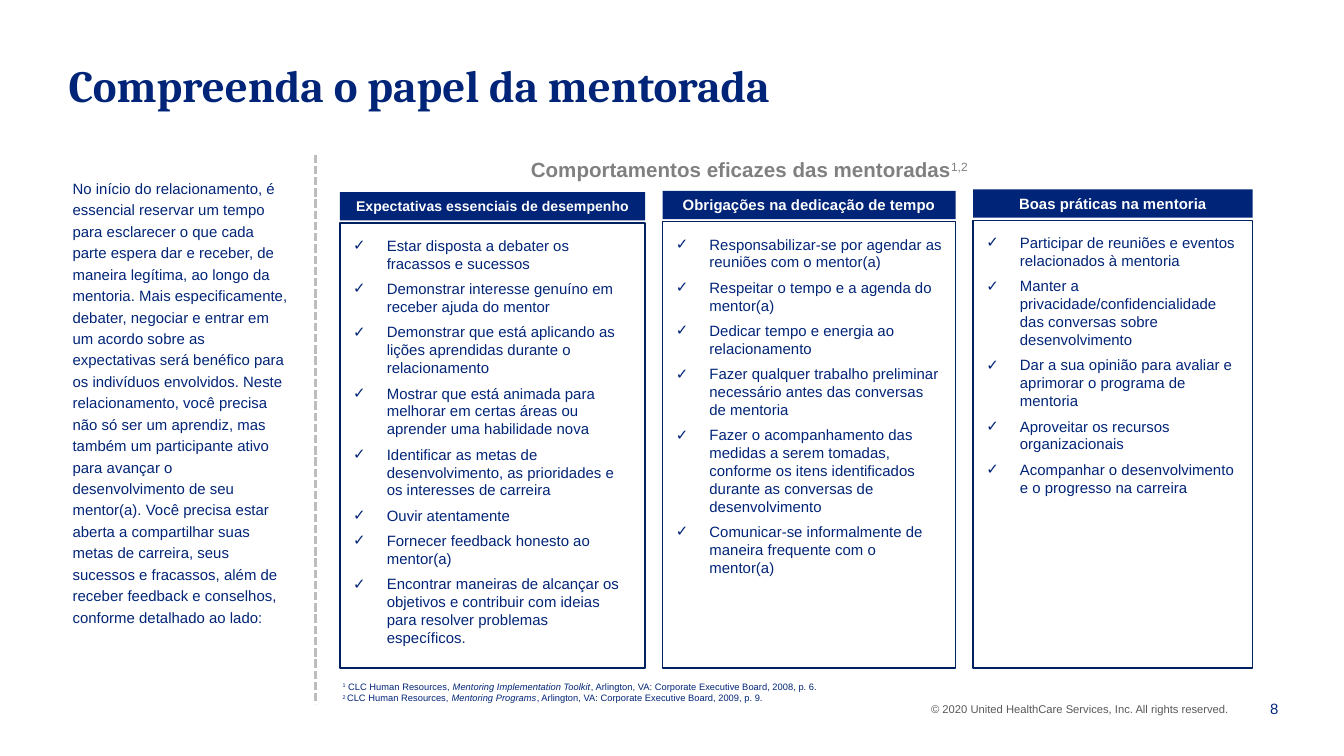
import lxml.etree
import pptx
import pptx.dml.color
import pptx.enum.dml
import pptx.enum.shapes
import pptx.enum.text
import pptx.oxml.ns
import pptx.util

NAVY = "002477"
BORDER = "002060"
GRAY = "808080"
LIGHT_GRAY = "BDBDBD"
FOOTER_GRAY = "595959"
WHITE = "FFFFFF"

ALIGN = pptx.enum.text.PP_ALIGN
ANCHOR = pptx.enum.text.MSO_ANCHOR

COLUMNS_LEFT = 2.53
COLUMNS_TOP = 1.43
COLUMNS_BOTTOM = 4.97
COLUMN_GAP = 0.13
COLUMN_STEP_UP = 0.01
HEADER_HEIGHT = 0.21
HEADER_PITCH = 0.23

INTRODUCTION = (
    "No início do relacionamento, é essencial reservar um tempo para esclarecer o que cada "
    "parte espera dar e receber, de maneira legítima, ao longo da mentoria. Mais "
    "especificamente, debater, negociar e entrar em um acordo sobre as expectativas será "
    "benéfico para os indivíduos envolvidos. Neste relacionamento, você precisa não só ser um "
    "aprendiz, mas também um participante ativo para avançar o desenvolvimento de seu "
    "mentor(a). Você precisa estar aberta a compartilhar suas metas de carreira, seus sucessos "
    "e fracassos, além de receber feedback e conselhos, conforme detalhado ao lado:"
)

COLUMNS = [
    ("Expectativas essenciais de desempenho", 7.5, 2.27, [
        "Estar disposta a debater os fracassos e sucessos",
        "Demonstrar interesse genuíno em receber ajuda do mentor",
        "Demonstrar que está aplicando as lições aprendidas durante o relacionamento",
        "Mostrar que está animada para melhorar em certas áreas ou aprender uma habilidade nova",
        "Identificar as metas de desenvolvimento, as prioridades e os interesses de carreira",
        "Ouvir atentamente",
        "Fornecer feedback honesto ao mentor(a)",
        "Encontrar maneiras de alcançar os objetivos e contribuir com ideias para resolver "
        "problemas específicos.",
    ]),
    ("Obrigações na dedicação de tempo", 8, 2.18, [
        "Responsabilizar-se por agendar as reuniões com o mentor(a)",
        "Respeitar o tempo e a agenda do mentor(a)",
        "Dedicar tempo e energia ao relacionamento",
        "Fazer qualquer trabalho preliminar necessário antes das conversas de mentoria",
        "Fazer o acompanhamento das medidas a serem tomadas, conforme os itens identificados "
        "durante as conversas de desenvolvimento",
        "Comunicar-se informalmente de maneira frequente com o mentor(a)",
    ]),
    ("Boas práticas na mentoria", 8, 2.08, [
        "Participar de reuniões e eventos relacionados à mentoria",
        "Manter a privacidade/confidencialidade das conversas sobre desenvolvimento",
        "Dar a sua opinião para avaliar e aprimorar o programa de mentoria",
        "Aproveitar os recursos organizacionais",
        "Acompanhar o desenvolvimento e o progresso na carreira",
    ]),
]

FOOTNOTES = [
    ("1", " CLC Human Resources, ", "Mentoring Implementation Toolkit",
     ", Arlington, VA: Corporate Executive Board, 2008, p. 6."),
    ("2 ", "CLC Human Resources, ", "Mentoring Programs",
     ", Arlington, VA: Corporate Executive Board, 2009, p. 9."),
]


def color(value):
    return pptx.dml.color.RGBColor.from_string(value)


def inches(*lengths):
    return [pptx.util.Inches(length) for length in lengths]


def add_run(paragraph, text, size, value=NAVY, font="Arial", bold=False, italic=False,
            superscript=False):
    run = paragraph.add_run()
    run.text = text
    run.font.name = font
    run.font.size = pptx.util.Pt(size)
    run.font.bold = bold
    run.font.italic = italic
    run.font.color.rgb = color(value)
    if superscript:
        run._r.get_or_add_rPr().set("baseline", "30000")


def set_bullet(paragraph, character=None, indent=0):
    properties = paragraph._p.get_or_add_pPr()
    properties.set("marL", str(pptx.util.Inches(indent)))
    properties.set("indent", str(-pptx.util.Inches(indent)))
    if character:
        font = lxml.etree.SubElement(properties, pptx.oxml.ns.qn("a:buFont"))
        font.set("typeface", "Arial")
        bullet = lxml.etree.SubElement(properties, pptx.oxml.ns.qn("a:buChar"))
        bullet.set("char", character)
    else:
        lxml.etree.SubElement(properties, pptx.oxml.ns.qn("a:buNone"))


def format_frame(shape, margins=(0.1, 0.05, 0.1, 0.05), anchor=ANCHOR.TOP):
    frame = shape.text_frame
    frame.word_wrap = True
    frame.auto_size = pptx.enum.text.MSO_AUTO_SIZE.NONE
    frame.vertical_anchor = anchor
    (frame.margin_left, frame.margin_top,
     frame.margin_right, frame.margin_bottom) = inches(*margins)
    return frame


def add_text_box(slide, box, **frame_options):
    return format_frame(slide.shapes.add_textbox(*inches(*box)), **frame_options)


def fill_placeholder(placeholder, box):
    placeholder.left, placeholder.top, placeholder.width, placeholder.height = inches(*box)
    paragraph = format_frame(placeholder).paragraphs[0]
    paragraph.alignment = ALIGN.LEFT
    paragraph.space_before = pptx.util.Pt(0)
    set_bullet(paragraph)
    return paragraph


def add_rectangle(slide, box, fill=None, line=None):
    shape = slide.shapes.add_shape(pptx.enum.shapes.MSO_SHAPE.RECTANGLE, *inches(*box))
    shape.shadow.inherit = False
    if fill:
        shape.fill.solid()
        shape.fill.fore_color.rgb = color(fill)
    else:
        shape.fill.background()
    if line:
        shape.line.color.rgb = color(line)
        shape.line.width = pptx.util.Pt(0.75)
    else:
        shape.line.fill.background()
    return shape


def add_column(slide, left, top, width, heading, heading_size, items):
    header = add_rectangle(slide, (left, top, width, HEADER_HEIGHT), fill=NAVY)
    frame = format_frame(header, (0.1, 0, 0.1, 0), ANCHOR.MIDDLE)
    frame.paragraphs[0].alignment = ALIGN.CENTER
    add_run(frame.paragraphs[0], heading, heading_size, WHITE, bold=True)

    list_top = top + HEADER_PITCH
    panel = add_rectangle(slide, (left, list_top, width, COLUMNS_BOTTOM - list_top), line=BORDER)
    frame = format_frame(panel, (0.1, 0.1, 0.1, 0.1))
    for index, item in enumerate(items):
        paragraph = frame.add_paragraph() if index else frame.paragraphs[0]
        paragraph.alignment = ALIGN.LEFT
        paragraph.space_before = pptx.util.Pt(4 if index else 0)
        set_bullet(paragraph, "✓", 0.25)
        add_run(paragraph, item, 8)


def add_divider(slide, left, top, bottom):
    divider = slide.shapes.add_connector(
        pptx.enum.shapes.MSO_CONNECTOR.STRAIGHT, *inches(left, top, left, bottom))
    divider.line.color.rgb = color(LIGHT_GRAY)
    divider.line.width = pptx.util.Pt(1.5)
    divider.line.dash_style = pptx.enum.dml.MSO_LINE.SQUARE_DOT
    lxml.etree.SubElement(divider._element.spPr, pptx.oxml.ns.qn("a:effectLst"))


def add_footnotes(slide):
    frame = add_text_box(slide, (2.45, 5.07, 5.01, 0.17), margins=(0.1, 0, 0.1, 0))
    for index, (mark, author, work, publisher) in enumerate(FOOTNOTES):
        paragraph = frame.add_paragraph() if index else frame.paragraphs[0]
        add_run(paragraph, mark, 5, superscript=True)
        add_run(paragraph, author, 5)
        add_run(paragraph, work, 5, italic=True)
        add_run(paragraph, publisher, 5)


def main():
    presentation = pptx.Presentation()
    presentation.slide_width = pptx.util.Inches(10)
    presentation.slide_height = presentation.slide_width * 9 // 16
    slide = presentation.slides.add_slide(presentation.slide_layouts[1])

    title = fill_placeholder(slide.shapes.title, (0.41, 0.38, 9.1, 0.6))
    add_run(title, "Compreenda o papel da mentorada", 24, font="Cambria", bold=True)

    introduction = fill_placeholder(slide.placeholders[1], (0.44, 1.26, 1.81, 3.71))
    introduction.line_spacing = 1.2
    add_run(introduction, INTRODUCTION, 8)

    add_divider(slide, 2.35, 1.15, 5.24)

    heading = add_text_box(slide, (3.64, 1.17, 4, 0.19), margins=(0.31, 0, 0.22, 0)).paragraphs[0]
    add_run(heading, "Comportamentos eficazes das mentoradas", 11, GRAY, bold=True)
    add_run(heading, "1,2", 11, GRAY, superscript=True)

    left = COLUMNS_LEFT
    for index, (column_heading, size, width, items) in enumerate(COLUMNS):
        top = COLUMNS_TOP - index * COLUMN_STEP_UP
        add_column(slide, left, top, width, column_heading, size, items)
        left += width + COLUMN_GAP

    add_footnotes(slide)
    footer = add_text_box(slide, (6.83, 5.18, 2.58, 0.2)).paragraphs[0]
    add_run(footer, "© 2020 United HealthCare Services, Inc. All rights reserved.", 6, FOOTER_GRAY)
    number = add_text_box(slide, (9.22, 5.12, 0.39, 0.31), anchor=ANCHOR.MIDDLE).paragraphs[0]
    number.alignment = ALIGN.RIGHT
    add_run(number, "8", 8)

    presentation.save("out.pptx")


if __name__ == "__main__":
    main()
